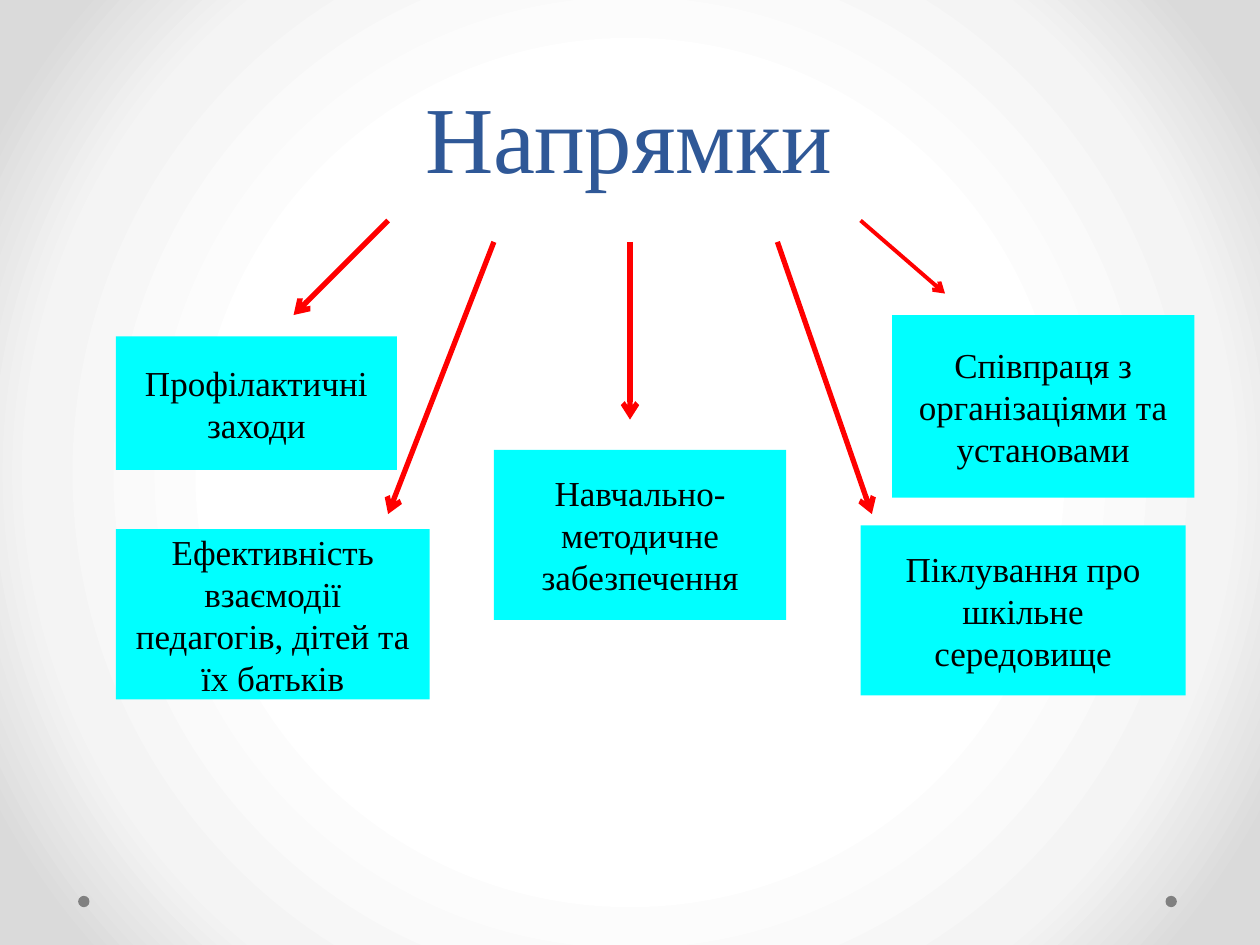
from dataclasses import dataclass

from lxml import etree
from pptx import Presentation
from pptx import util as u
from pptx.dml.color import RGBColor
from pptx.enum import shapes, text
from pptx.oxml import parse_xml
from pptx.oxml.ns import nsdecls, qn


@dataclass(frozen=True)
class Theme:
    font: str = "Times New Roman"
    title: str = "2F5897"
    ink: str = "000000"
    box: str = "00FFFF"
    arrow: str = "FF0000"
    dot: str = "808080"
    glow: tuple = ((50, "FFFFFF"), (76, "F4F4F4"), (92, "DADADA"))
    head: int = 54
    lead: int = 58
    body: int = 20


class Deck:
    def __init__(self, theme, slide):
        self.theme = theme
        self.slide = slide

    def glow(self):
        """Radial gradient behind the slide."""
        fill = self.slide.background.fill
        fill.gradient()
        old = self.slide.element.find(".//" + qn("a:gradFill"))
        stops = "".join(
            f'<a:gs pos="{pos * 1000}"><a:srgbClr val="{hue}"/></a:gs>'
            for pos, hue in self.theme.glow)
        new = parse_xml(
            f'<a:gradFill {nsdecls("a")} rotWithShape="1"><a:gsLst>{stops}</a:gsLst>'
            '<a:path path="circle"><a:fillToRect l="50000" t="50000" r="50000" b="50000"/>'
            '</a:path></a:gradFill>')
        old.getparent().replace(old, new)

    def label(self, frame, words, size, hue, anchor):
        frame.word_wrap = True
        frame.vertical_anchor = anchor
        para = frame.paragraphs[0]
        para.alignment = text.PP_ALIGN.CENTER
        run = para.add_run()
        run.text = words
        run.font.name = self.theme.font
        run.font.size = u.Pt(size)
        run.font.color.rgb = RGBColor.from_string(hue)
        return para

    def title(self, words, *area):
        box = self.slide.shapes.add_textbox(*map(u.Inches, area))
        para = self.label(box.text_frame, words, self.theme.head,
                          self.theme.title, text.MSO_ANCHOR.BOTTOM)
        para.line_spacing = u.Pt(self.theme.lead)

    def shape(self, kind, hue, *area):
        item = self.slide.shapes.add_shape(kind, *map(u.Inches, area))
        item.shadow.inherit = False
        item.fill.solid()
        item.fill.fore_color.rgb = RGBColor.from_string(hue)
        item.line.fill.background()
        return item

    def dot(self, left, top, size):
        self.shape(shapes.MSO_SHAPE.OVAL, self.theme.dot, left, top, size, size)

    def box(self, words, *area):
        item = self.shape(shapes.MSO_SHAPE.RECTANGLE, self.theme.box, *area)
        self.label(item.text_frame, words, self.theme.body,
                   self.theme.ink, text.MSO_ANCHOR.MIDDLE)

    def arrow(self, start, end, width=3):
        item = self.slide.shapes.add_connector(
            shapes.MSO_CONNECTOR.STRAIGHT, *map(u.Inches, (*start, *end)))
        item.line.color.rgb = RGBColor.from_string(self.theme.arrow)
        item.line.width = u.Pt(width)
        props = item.element.spPr
        etree.SubElement(props.find(qn("a:ln")), qn("a:tailEnd"), type="arrow")
        etree.SubElement(props, qn("a:effectLst"))


def main():
    prs = Presentation()
    prs.slide_width, prs.slide_height = u.Inches(10), u.Inches(7.5)
    deck = Deck(Theme(), prs.slides.add_slide(prs.slide_layouts[6]))

    # Backdrop
    deck.glow()
    for left in (0.62, 9.25):
        deck.dot(left, 7.11, 0.09)

    # Heading
    deck.title("Напрямки", 0.49, -0.17, 9, 1.75)

    # Directions
    for words, *area in (
        ("Профілактичні заходи", 0.92, 2.67, 2.23, 1.06),
        ("Навчально-методичне забезпечення", 3.92, 3.57, 2.32, 1.35),
        ("Співпраця з організаціями та установами", 7.08, 2.5, 2.4, 1.45),
        ("Піклування про шкільне середовище", 6.83, 4.17, 2.58, 1.35),
        ("Ефективність взаємодії педагогів, дітей та їх батьків",
         0.92, 4.2, 2.49, 1.35),
    ):
        deck.box(words, *area)

    # Arrows from the heading to the directions
    deck.arrow((3.08, 1.75), (2.33, 2.5))
    deck.arrow((3.92, 1.92), (3.08, 4.08))
    deck.arrow((5, 1.92), (5, 3.33))
    deck.arrow((6.17, 1.92), (6.92, 4.08))
    deck.arrow((6.83, 1.75), (7.5, 2.33), 2.25)

    prs.save("out.pptx")


if __name__ == "__main__":
    main()
